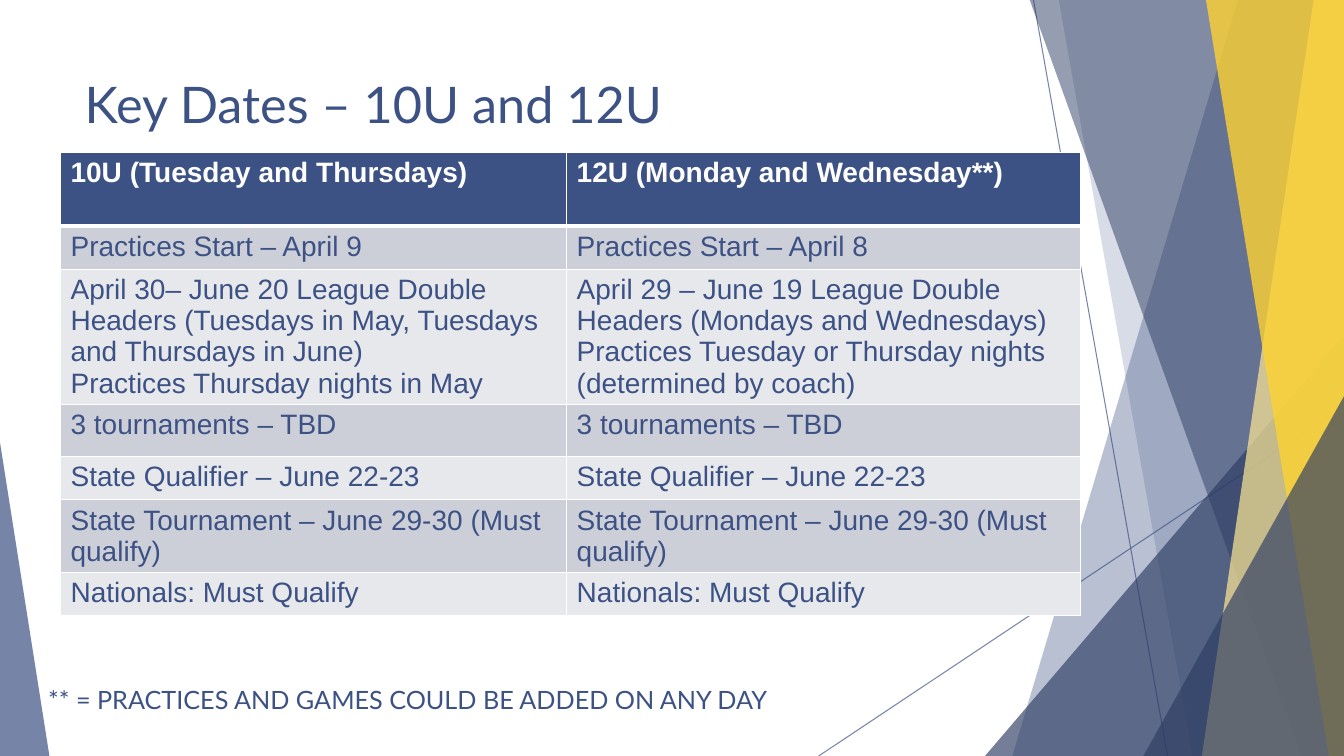
from lxml import etree
from pptx import Presentation
from pptx.dml.color import RGBColor
from pptx.enum.shapes import MSO_CONNECTOR, MSO_SHAPE
from pptx.enum.text import MSO_ANCHOR as Anchor, PP_ALIGN as Align
from pptx.oxml.ns import qn
from pptx.util import Inches, Pt

COLORS = {
    "navy": "3C5184", "deep": "2D3C63", "gold": "FDD231", "cream": "FEE895",
    "white": "FFFFFF", "band_dark": "CDCFD8", "band_light": "E7E8EC",
}
WIDTH, HEIGHT = 13.33, 7.5

ROWS = [
    (0.73, "10U (Tuesday and Thursdays)", "12U (Monday and Wednesday**)"),
    (0.43, "Practices Start – April 9", "Practices Start – April 8"),
    (0.7,
     "April 30– June 20 League Double Headers (Tuesdays in May, Tuesdays and "
     "Thursdays in June)\nPractices Thursday nights in May",
     "April 29 – June 19 League Double Headers (Mondays and Wednesdays)\n"
     "Practices Tuesday or Thursday nights (determined by coach)"),
    (0.52, "3 tournaments – TBD", "3 tournaments – TBD"),
    (0.43, "State Qualifier – June 22-23", "State Qualifier – June 22-23"),
    (0.38, "State Tournament – June 29-30 (Must qualify)",
     "State Tournament – June 29-30 (Must qualify)"),
    (0.43, "Nationals: Must Qualify", "Nationals: Must Qualify"),
]


def rgb(name):
    """Return the named palette colour."""
    return RGBColor.from_string(COLORS[name])


def set_alpha(parent, percent):
    """Set the opacity of the solid colour found inside an element."""
    color = next(parent.iter(qn("a:srgbClr")))
    etree.SubElement(color, qn("a:alpha"), val=str(percent * 1000))


def paint(shape, color, opacity):
    """Give a shape a translucent fill with no line or shadow."""
    shape.shadow.inherit = False
    shape.fill.solid()
    shape.fill.fore_color.rgb = rgb(color)
    shape.line.fill.background()
    set_alpha(shape.fill._xPr, opacity)


def format_text(frame, font, size, color, bold=False):
    """Format every run of a text frame."""
    for para in frame.paragraphs:
        para.alignment = Align.LEFT
        for span in para.runs:
            span.font.name = font
            span.font.size = Pt(size)
            span.font.bold = bold
            span.font.color.rgb = rgb(color)


def add_ray(page, start, end):
    """Draw one thin translucent line between two points."""
    ray = page.shapes.add_connector(
        MSO_CONNECTOR.STRAIGHT, *map(Inches, (*start, *end)))
    ray.line.width = Pt(0.75)
    ray.line.color.rgb = rgb("navy")
    properties = ray._element.spPr
    set_alpha(properties, 70)
    etree.SubElement(properties, qn("a:effectLst"))


def add_facet(page, top_left, bottom_left, color, opacity):
    """Fill the area from a slanted left edge to the right slide edge."""
    top = -0.01
    corners = [(top_left, top), (WIDTH, top), (WIDTH, HEIGHT), (bottom_left, HEIGHT)]
    points = [(Inches(x), Inches(y)) for x, y in corners]
    builder = page.shapes.build_freeform(*points[0])
    builder.add_line_segments(points[1:], close=True)
    paint(builder.convert_to_shape(), color, opacity)


def add_corner(page, left, top, width, apex, color, opacity):
    """Stand a right triangle on the bottom slide edge."""
    corner = page.shapes.add_shape(
        MSO_SHAPE.ISOSCELES_TRIANGLE,
        *map(Inches, (left, top, width, HEIGHT - top)))
    corner.adjustments[0] = apex
    paint(corner, color, opacity)


def add_backdrop(page):
    """Layer the lines, facets and corners behind the content."""
    add_ray(page, (10.25, 0), (11.58, HEIGHT))
    add_ray(page, (WIDTH, 4.03), (8.12, HEIGHT))
    add_facet(page, 12.28, 10.04, "navy", 36)
    add_facet(page, 10.5, 11.83, "navy", 20)
    add_corner(page, 9.77, 3.33, 3.56, 1, "deep", 66)
    add_facet(page, 10.21, 12.91, "deep", 50)
    add_facet(page, 13.03, 11.92, "cream", 70)
    add_facet(page, 11.96, 13.18, "gold", 80)
    add_corner(page, 11.34, 3.93, 1.99, 1, "deep", 66)
    add_corner(page, 0, 4.39, 0.49, 0, "navy", 70)


def add_title(page, left, top, width, height):
    """Place and format the title placeholder."""
    title = page.shapes.title
    title.left, title.top, title.width, title.height = map(
        Inches, (left, top, width, height))
    frame = title.text_frame
    frame.text = "Key Dates – 10U and 12U"
    frame.vertical_anchor = Anchor.MIDDLE
    format_text(frame, "Lato", 36, "navy")


def set_borders(cell, row):
    """Draw white cell borders, heavier below the header."""
    heavy = {(0, "lnB"), (1, "lnT")}
    for side in ("lnL", "lnR", "lnT", "lnB"):
        weight = 3 if (row, side) in heavy else 1
        line = etree.SubElement(
            cell._tc.get_or_add_tcPr(), qn(f"a:{side}"), w=str(Pt(weight)))
        fill = etree.SubElement(line, qn("a:solidFill"))
        etree.SubElement(fill, qn("a:srgbClr"), val=COLORS["white"])


def add_dates_table(page, left, top, columns):
    """Build the two-column table of dates."""
    height = sum(row[0] for row in ROWS)
    table = page.shapes.add_table(
        len(ROWS), len(columns),
        *map(Inches, (left, top, sum(columns), height))).table
    for column, width in zip(table.columns, columns):
        column.width = Inches(width)
    for index, (row_height, *texts) in enumerate(ROWS):
        table.rows[index].height = Inches(row_height)
        header = index == 0
        band = "navy" if header else "band_dark" if index % 2 else "band_light"
        for number, text in enumerate(texts):
            cell = table.cell(index, number)
            set_borders(cell, index)
            cell.fill.solid()
            cell.fill.fore_color.rgb = rgb(band)
            cell.text_frame.text = text
            format_text(cell.text_frame, "Arial", 20,
                        "white" if header else "navy", header)


def add_footnote(page, left, top, width, height):
    """Add the note that explains the asterisks."""
    box = page.shapes.add_textbox(*map(Inches, (left, top, width, height)))
    frame = box.text_frame
    frame.word_wrap = True
    frame.text = "** = PRACTICES AND GAMES COULD BE ADDED ON ANY DAY"
    format_text(frame, "Lato", 18, "navy")


def main():
    """Build and save the slide."""
    deck = Presentation()
    deck.slide_width, deck.slide_height = Inches(WIDTH), Inches(HEIGHT)
    page = deck.slides.add_slide(deck.slide_layouts[5])
    add_backdrop(page)
    add_title(page, 0.74, 0.67, 9.4, 0.72)
    add_dates_table(page, 0.6, 1.51, (5.02, 5.1))
    add_footnote(page, 0.38, 6.74, 10.54, 0.4)
    deck.save("out.pptx")


if __name__ == "__main__":
    main()
